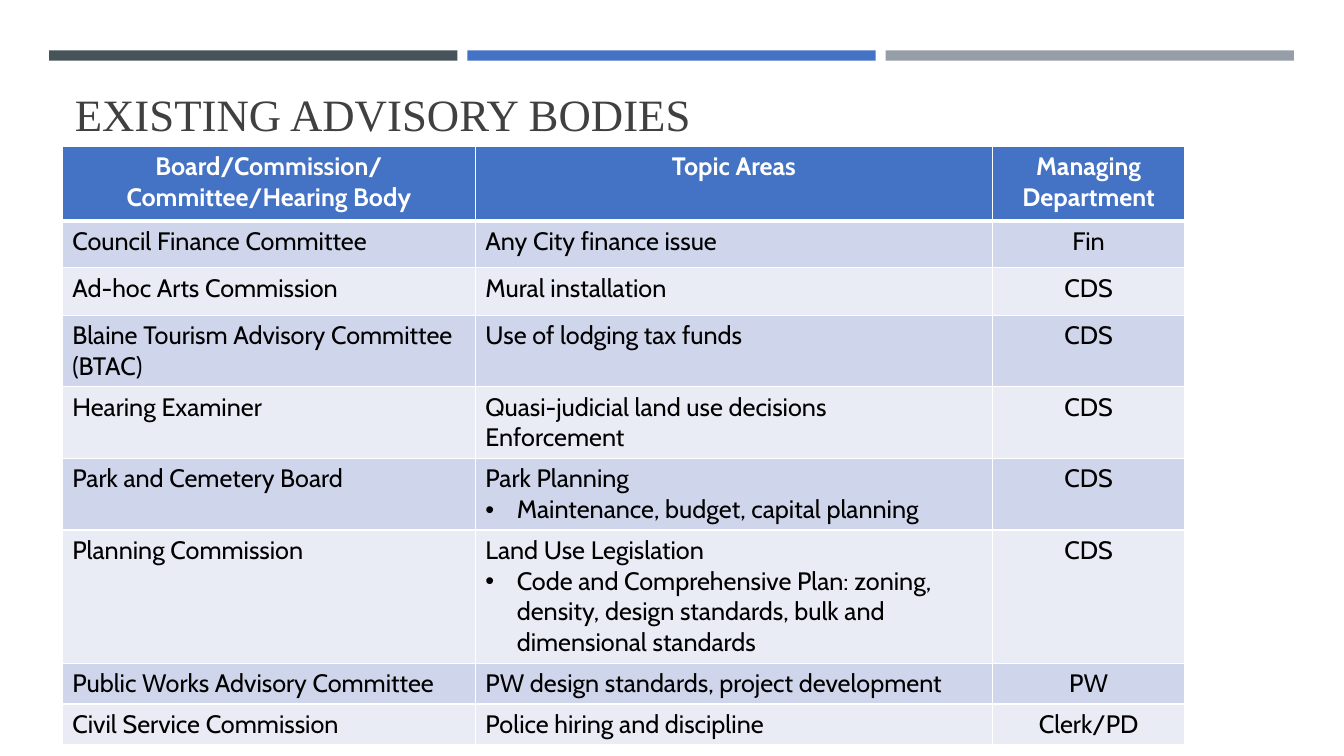
from pptx import Presentation
from pptx.dml.color import RGBColor
from pptx.enum.shapes import MSO_SHAPE
from pptx.enum.text import MSO_ANCHOR, MSO_AUTO_SIZE, PP_ALIGN
from pptx.oxml.ns import qn
from pptx.util import Cm, Pt
from lxml.etree import SubElement

COLORS = {
    "slate": "465359", "blue": "4472C4", "gray": "969FA7", "title": "404040",
    "white": "FFFFFF", "black": "000000", "band_dark": "CFD5EA", "band_light": "E9EBF5",
}
BULLET = "• "
COLUMN_WIDTHS = [10.41, 13.03, 4.85]
ROW_HEIGHTS = [1.88] + [1.19] * 5 + [0.94] * 3

# One list of paragraphs per cell
HEADER = [["Board/Commission/\nCommittee/Hearing Body"], ["Topic Areas"],
          ["Managing", "Department"]]
BODIES = [
    [["Council Finance Committee"], ["Any City finance issue"], ["Fin"]],
    [["Ad-hoc Arts Commission"], ["Mural installation"], ["CDS"]],
    [["Blaine Tourism Advisory Committee (BTAC)"], ["Use of lodging tax funds"], ["CDS"]],
    [["Hearing Examiner"], ["Quasi-judicial land use decisions\nEnforcement"], ["CDS"]],
    [["Park and Cemetery Board"],
     ["Park Planning", BULLET + "Maintenance, budget, capital planning"], ["CDS"]],
    [["Planning Commission"],
     ["Land Use Legislation",
      BULLET + "Code and Comprehensive Plan: zoning, density, design standards, "
      "bulk and dimensional standards"], ["CDS"]],
    [["Public Works Advisory Committee"], ["PW design standards, project development"], ["PW"]],
    [["Civil Service Commission"], ["Police hiring and discipline"], ["Clerk/PD"]],
]


def color(name):
    return RGBColor.from_string(COLORS[name])


class SlideBuilder:
    title_font = "Times New Roman"
    body_font = "Cabin"
    body_size = 18

    def __init__(self, deck):
        self.page = deck.slides.add_slide(deck.slide_layouts[5])

    def add_span(self, para, text, font, size, fill, bold=False):
        span = para.add_run()
        span.text = text
        span.font.name = font
        span.font.size = Pt(size)
        span.font.bold = bold
        span.font.color.rgb = color(fill)

    def title(self, text, left, top, width, height):
        box = self.page.shapes.title
        box.left, box.top, box.width, box.height = Cm(left), Cm(top), Cm(width), Cm(height)
        frame = box.text_frame
        frame.vertical_anchor = MSO_ANCHOR.BOTTOM
        frame.auto_size = MSO_AUTO_SIZE.NONE
        para = frame.paragraphs[0]
        para.alignment = PP_ALIGN.LEFT
        self.add_span(para, text, self.title_font, 32, "title")

    def bar(self, left, top, width, height, fill):
        bar = self.page.shapes.add_shape(
            MSO_SHAPE.RECTANGLE, Cm(left), Cm(top), Cm(width), Cm(height))
        bar.shadow.inherit = False
        bar.fill.solid()
        bar.fill.fore_color.rgb = color(fill)
        bar.line.fill.background()

    def table(self, rows, left, top):
        table = self.page.shapes.add_table(
            len(rows), len(COLUMN_WIDTHS), Cm(left), Cm(top),
            Cm(sum(COLUMN_WIDTHS)), Cm(sum(ROW_HEIGHTS))).table
        for column, width in zip(table.columns, COLUMN_WIDTHS):
            column.width = Cm(width)
        for row, height in zip(table.rows, ROW_HEIGHTS):
            row.height = Cm(height)
        for row_index, row in enumerate(rows):
            for column_index, paragraphs in enumerate(row):
                self.cell(table.cell(row_index, column_index), paragraphs,
                          row_index, centered=row_index == 0 or column_index == 2)

    def cell(self, cell, paragraphs, row_index, centered):
        is_header = row_index == 0
        self.borders(cell, top=3 if row_index == 1 else 1, bottom=3 if is_header else 1)
        band = "band_dark" if row_index % 2 else "band_light"
        cell.fill.solid()
        cell.fill.fore_color.rgb = color("blue" if is_header else band)
        frame = cell.text_frame
        for index, text in enumerate(paragraphs):
            para = frame.add_paragraph() if index else frame.paragraphs[0]
            para.alignment = PP_ALIGN.CENTER if centered else PP_ALIGN.LEFT
            if text.startswith(BULLET):
                self.bullet(para)
            for line_index, line in enumerate(text.removeprefix(BULLET).split("\n")):
                if line_index:
                    para.add_line_break()
                self.add_span(para, line, self.body_font, self.body_size,
                              "white" if is_header else "black", is_header)

    def bullet(self, para):
        properties = para._p.get_or_add_pPr()
        properties.set("marL", str(Cm(0.79)))
        properties.set("indent", str(-Cm(0.79)))
        SubElement(properties, qn("a:buFont"), typeface="Arial")
        SubElement(properties, qn("a:buChar"), char=BULLET.strip())

    def borders(self, cell, top, bottom):
        """Draw white cell borders; must run before the cell gets its fill."""
        properties = cell._tc.get_or_add_tcPr()
        for side, width in (("L", 1), ("R", 1), ("T", top), ("B", bottom)):
            line = SubElement(properties, qn(f"a:ln{side}"), w=str(Pt(width)))
            fill = SubElement(line, qn("a:solidFill"))
            SubElement(fill, qn("a:srgbClr"), val=COLORS["white"])


def main():
    deck = Presentation()
    deck.slide_width, deck.slide_height = Cm(33.87), Cm(19.05)
    builder = SlideBuilder(deck)
    for index, fill in enumerate(["slate", "blue", "gray"]):
        builder.bar(1.24 + index * 10.54, 1.27, 10.29, 0.26, fill)
    builder.title("EXISTING ADVISORY BODIES", 1.63, 0, 30.63, 3.68)
    builder.table([HEADER] + BODIES, 1.57, 3.68)
    deck.save("out.pptx")


if __name__ == "__main__":
    main()
